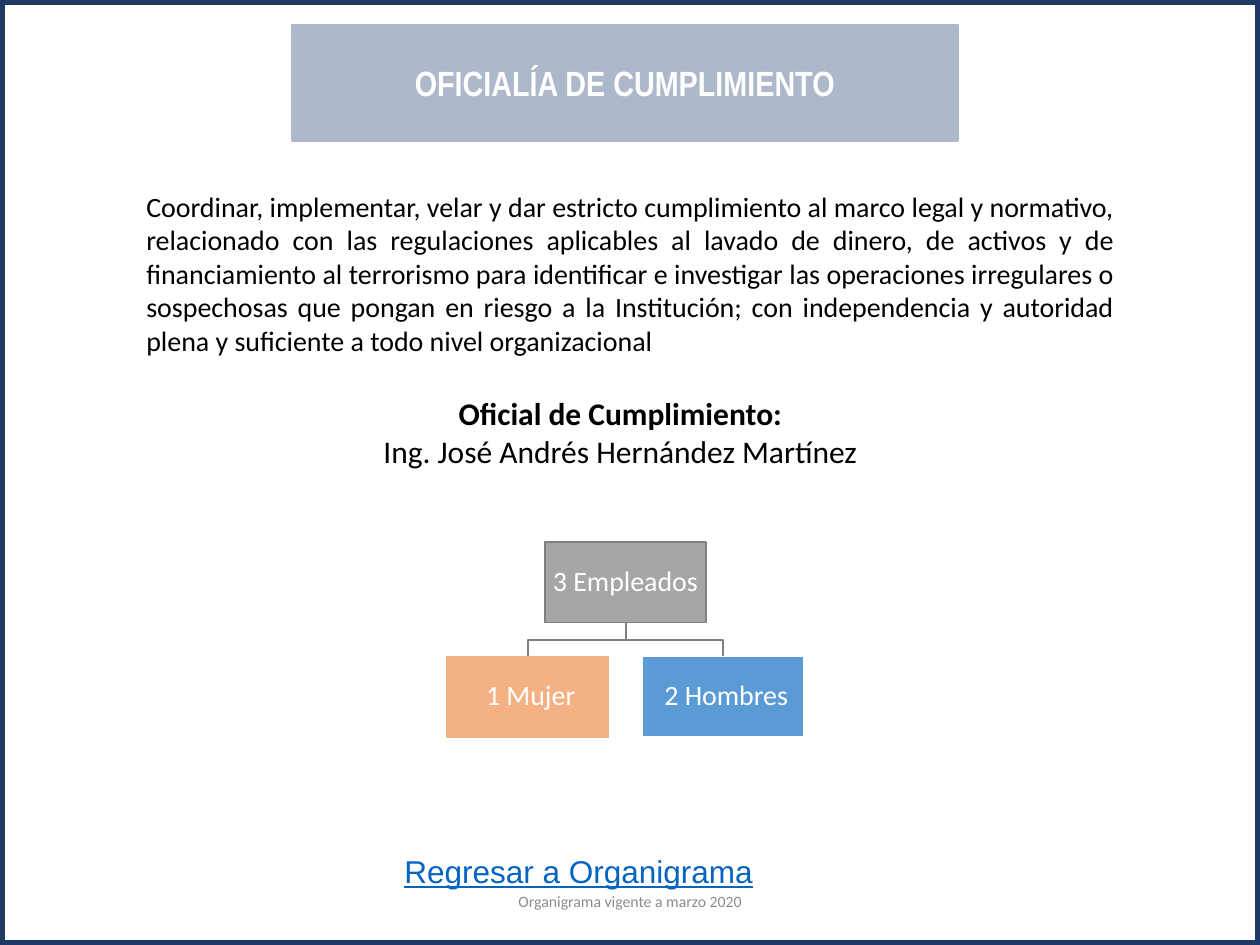
from dataclasses import dataclass
from pptx import Presentation
from pptx.dml.color import RGBColor
from pptx.enum.shapes import MSO_SHAPE
from pptx.enum.text import MSO_ANCHOR, MSO_AUTO_SIZE, PP_ALIGN
from pptx.util import Pt

PX = 914400 / 126


@dataclass(frozen=True)
class Theme:
    body: str = "Calibri"
    head: str = "Arial Narrow"
    link: str = "Arial"
    navy: str = "203864"
    band: str = "ADB9CA"
    gray: str = "A6A6A6"
    rule: str = "808080"
    peach: str = "F4B183"
    blue: str = "5B9BD5"
    url: str = "0563C1"
    note: str = "8C8C8C"
    white: str = "FFFFFF"
    black: str = "000000"
    title: int = 20
    lead: int = 18
    text: int = 16
    small: int = 9


T = Theme()


def emu(*nums):
    return [round(n * PX) for n in nums]


def paint(shape, fill, line, width=1):
    if fill:
        shape.fill.solid()
        shape.fill.fore_color.rgb = RGBColor.from_string(fill)
    else:
        shape.fill.background()
    shape.line.color.rgb = RGBColor.from_string(line)
    shape.line.width = Pt(width)
    shape.shadow.inherit = False


def write(para, text, color, align=PP_ALIGN.CENTER, **style):
    """Put one run in a paragraph; style holds font attributes."""
    para.alignment = align
    run = para.add_run()
    run.text = text
    run.font.color.rgb = RGBColor.from_string(color)
    for key, val in style.items():
        setattr(run.font, key, val)


def add_text(slide, box, anchor=MSO_ANCHOR.TOP):
    frame = slide.shapes.add_textbox(*emu(*box)).text_frame
    frame.word_wrap = True
    frame.vertical_anchor = anchor
    return frame


def add_rect(slide, box, fill, line, width=1):
    shape = slide.shapes.add_shape(MSO_SHAPE.RECTANGLE, *emu(*box))
    paint(shape, fill, line, width)
    return shape


def add_title(slide, box, text):
    title = slide.shapes.title
    title.left, title.top, title.width, title.height = emu(*box)
    paint(title, T.band, T.band)
    frame = title.text_frame
    frame.auto_size = MSO_AUTO_SIZE.NONE
    frame.vertical_anchor = MSO_ANCHOR.MIDDLE
    write(frame.paragraphs[0], text, T.white,
          name=T.head, size=Pt(T.title), bold=True)


def add_node(slide, box, text, fill, line, inset=1):
    frame = add_rect(slide, box, fill, line).text_frame
    frame.word_wrap = True
    frame.vertical_anchor = MSO_ANCHOR.MIDDLE
    pads = {"margin_left": inset, "margin_right": 1,
            "margin_top": 1, "margin_bottom": 1}
    for key, val in pads.items():
        setattr(frame, key, emu(val)[0])
    para = frame.paragraphs[0]
    para.line_spacing = 0.9
    write(para, text, T.white, name=T.body, size=Pt(T.text))


def add_tree(slide, box, root, kids):
    """Draw a root node centred above a row of equal child nodes."""
    left, top, width, height = box
    gap = 34
    wide = (width - gap * (len(kids) - 1)) / len(kids)
    high = (height - gap) / 2
    mid, base = left + width / 2, top + high
    row = base + gap
    spots = [left + i * (wide + gap) for i in range(len(kids))]
    for x in spots:
        end = x + wide / 2
        pen = slide.shapes.build_freeform(mid, base, scale=PX)
        pen.add_line_segments([(mid, base + gap / 2),
                               (end, base + gap / 2), (end, row)], close=False)
        paint(pen.convert_to_shape(), None, T.rule)
    add_node(slide, (mid - wide / 2, top, wide, high), *root)
    for x, kid in zip(spots, kids):
        add_node(slide, (x, row, wide, high), *kid, inset=7)


def add_duty(slide, box, text):
    frame = add_text(slide, box)
    write(frame.paragraphs[0], text, T.black, PP_ALIGN.JUSTIFY,
          name=T.body, size=Pt(T.text))


def add_head(slide, box, role, name):
    frame = add_text(slide, box)
    font = {"name": T.body, "size": Pt(T.lead)}
    write(frame.paragraphs[0], role, T.black, bold=True, **font)
    write(frame.add_paragraph(), name, T.black, **font)


def add_foot(slide, box, link, note):
    left, top, width, height = box
    frame = add_text(slide, (left, top, 412, 50))
    write(frame.paragraphs[0], link, T.url, PP_ALIGN.LEFT,
          name=T.link, size=Pt(T.lead), underline=True)
    frame = add_text(slide, (left + 25, top + height - 50, width - 25, 50),
                     MSO_ANCHOR.MIDDLE)
    write(frame.paragraphs[0], note, T.note, name=T.body, size=Pt(T.small))


def main():
    deck = Presentation()
    deck.slide_width, deck.slide_height = emu(1260, 945)
    slide = deck.slides.add_slide(deck.slide_layouts[5])
    add_rect(slide, (0, 0, 1260, 945), None, T.navy, 6)
    add_title(slide, (292, 25, 666, 116), "OFICIALÍA DE CUMPLIMIENTO")
    add_duty(slide, (134, 183, 993, 183),
             "Coordinar, implementar, velar y dar estricto cumplimiento al marco "
             "legal y normativo, relacionado con las regulaciones aplicables al "
             "lavado de dinero, de activos y de financiamiento al terrorismo para "
             "identificar e investigar las operaciones irregulares o sospechosas "
             "que pongan en riesgo a la Institución; con independencia y "
             "autoridad plena y suficiente a todo nivel organizacional")
    add_head(slide, (318, 388, 605, 90), "Oficial de Cumplimiento:",
             "Ing. José Andrés Hernández Martínez")
    add_tree(slide, (447, 542, 357, 195), ("3 Empleados", T.gray, T.rule),
             [("1 Mujer", T.peach, T.peach), ("2 Hombres", T.blue, T.white)])
    add_foot(slide, (392, 846, 451, 80), "Regresar a Organigrama",
             "Organigrama vigente a marzo 2020")
    deck.save("out.pptx")


if __name__ == "__main__":
    main()
